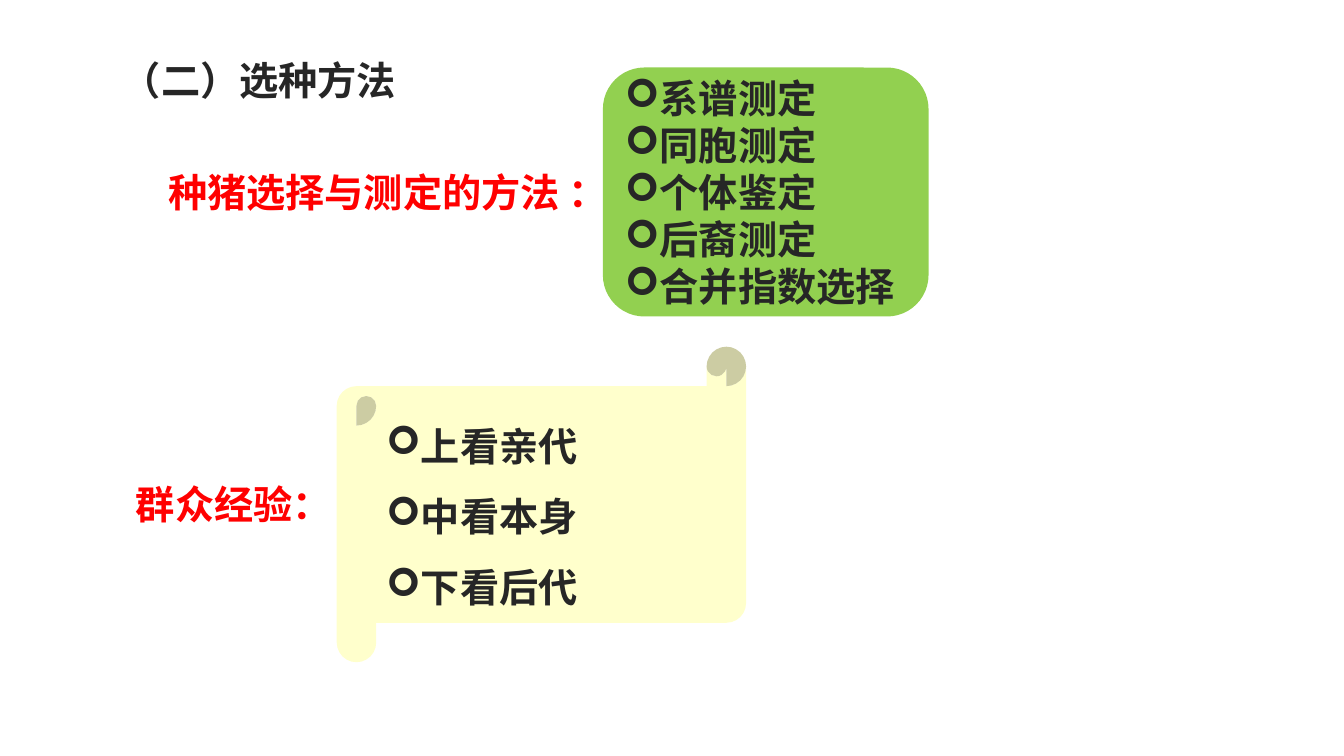
import pptx
import pptx.dml.color
import pptx.enum.shapes
import pptx.enum.text
import pptx.oxml
import pptx.oxml.ns
import pptx.util

# Content
TITLE = "（二）选种方法"
METHODS_LABEL = "种猪选择与测定的方法 ："
METHODS = ["系谱测定", "同胞测定", "个体鉴定", "后裔测定", "合并指数选择"]
EXPERIENCE_LABEL = "群众经验："
EXPERIENCE = ["上看亲代", "中看本身", "下看后代"]

# Format and places in inches: left, top, width, height
FONT, SIZE = "Noto Sans CJK SC", 28
DARK, RED, GREEN, CREAM = "262626", "FF0000", "92D050", "FFFFCC"
INDENT = 0.31
TITLE_BOX = (1.11, 0.51, 3.57, 0.63)
METHODS_LABEL_BOX = (1.57, 1.62, 4.83, 0.57)
EXPERIENCE_LABEL_BOX = (1.25, 4.72, 2.24, 0.57)
METHODS_BOX = (5.98, 0.67, 3.23, 2.47)
EXPERIENCE_BOX = (3.34, 3.44, 4.06, 3.13)


def color(value):
    return pptx.dml.color.RGBColor.from_string(value)


def inches(box):
    return [pptx.util.Inches(length) for length in box]


def add_bullet(paragraph):
    properties = paragraph._p.get_or_add_pPr()
    indent = pptx.util.Inches(INDENT)
    properties.set("marL", str(indent))
    properties.set("indent", str(-indent))
    namespace = pptx.oxml.ns.nsdecls("a")
    for element in (f'<a:buFont {namespace} typeface="Wingdings"/>',
                    f'<a:buChar {namespace} char="➢"/>'):
        properties.append(pptx.oxml.parse_xml(element))


def write(shape, lines, text_color=DARK, spacing=None, bullets=False, anchor="MIDDLE"):
    frame = shape.text_frame
    frame.word_wrap = True
    frame.auto_size = pptx.enum.text.MSO_AUTO_SIZE.NONE
    frame.vertical_anchor = pptx.enum.text.MSO_ANCHOR[anchor]
    for index, line in enumerate(lines):
        paragraph = frame.add_paragraph() if index else frame.paragraphs[0]
        paragraph.alignment = pptx.enum.text.PP_ALIGN.LEFT
        if spacing:
            paragraph.line_spacing = spacing
        if bullets:
            add_bullet(paragraph)
        run = paragraph.add_run()
        run.text = line
        run.font.name = FONT
        run.font.size = pptx.util.Pt(SIZE)
        run.font.bold = True
        run.font.color.rgb = color(text_color)
        east_asian = pptx.oxml.parse_xml(
            f'<a:ea {pptx.oxml.ns.nsdecls("a")} typeface="{FONT}"/>')
        run.font._element.find(pptx.oxml.ns.qn("a:latin")).addnext(east_asian)


presentation = pptx.Presentation()
presentation.slide_width = pptx.util.Inches(13.33)
presentation.slide_height = pptx.util.Inches(7.5)
slide = presentation.slides.add_slide(presentation.slide_layouts.get_by_name("Title Only"))

# Title
title = slide.shapes.title
title.left, title.top, title.width, title.height = inches(TITLE_BOX)
write(title, [TITLE], spacing=0.9)

# Red labels
for label, box in ((METHODS_LABEL, METHODS_LABEL_BOX),
                   (EXPERIENCE_LABEL, EXPERIENCE_LABEL_BOX)):
    write(slide.shapes.add_textbox(*inches(box)), [label], text_color=RED, anchor="TOP")

# Bulleted panels
PRESETS = pptx.enum.shapes.MSO_SHAPE
for preset, box, fill, lines, spacing in (
        (PRESETS.ROUNDED_RECTANGLE, METHODS_BOX, GREEN, METHODS, None),
        (PRESETS.HORIZONTAL_SCROLL, EXPERIENCE_BOX, CREAM, EXPERIENCE, 1.5)):
    panel = slide.shapes.add_shape(preset, *inches(box))
    panel.shadow.inherit = False
    panel.fill.solid()
    panel.fill.fore_color.rgb = color(fill)
    panel.line.fill.background()
    write(panel, lines, spacing=spacing, bullets=True)

presentation.save("out.pptx")
